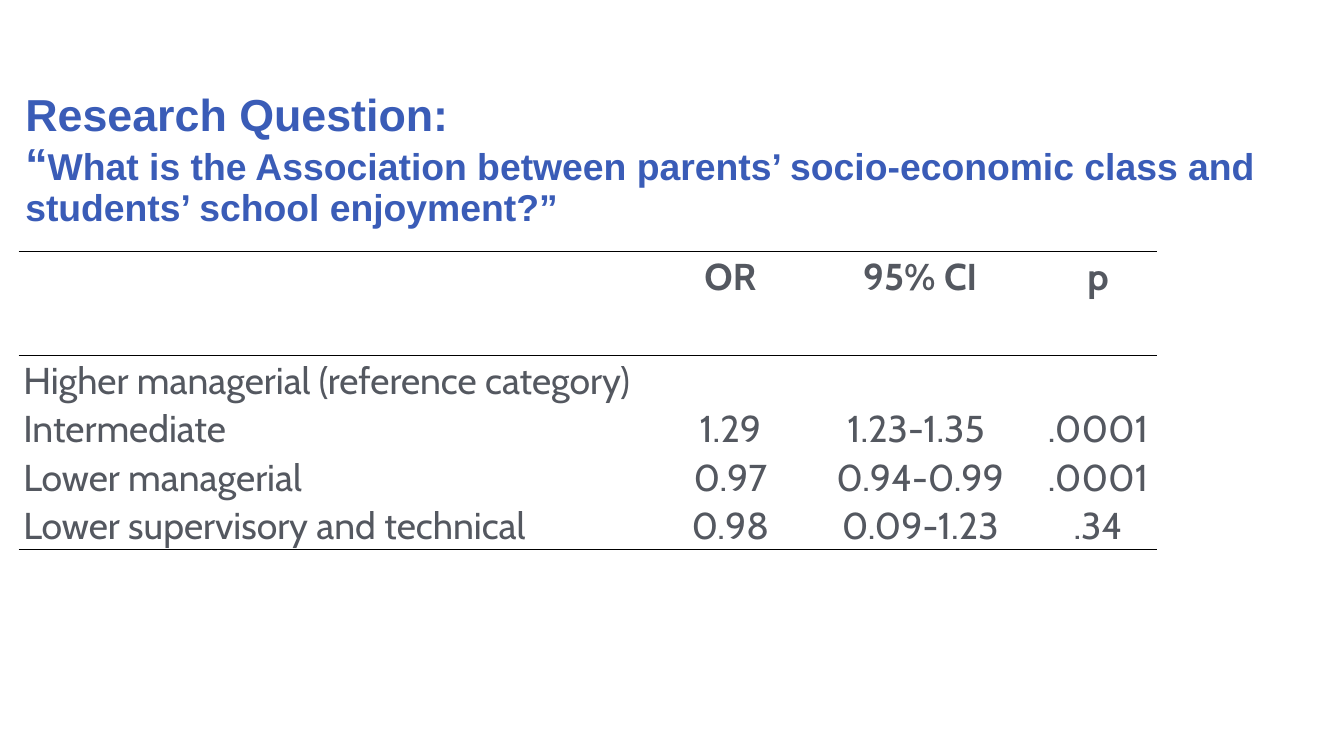
from typing import NamedTuple

from lxml import etree
from pptx import Presentation
from pptx.dml.color import RGBColor
from pptx.enum.text import MSO_ANCHOR, PP_ALIGN
from pptx.oxml.ns import qn
from pptx.util import Pt

LEFT, CENTER = PP_ALIGN.LEFT, PP_ALIGN.CENTER
TOP, MIDDLE = MSO_ANCHOR.TOP, MSO_ANCHOR.MIDDLE

BLUE = RGBColor(0x3A, 0x5C, 0xB7)
GREY = RGBColor(0x54, 0x58, 0x60)
BLACK = RGBColor(0x00, 0x00, 0x00)

COLUMN_WIDTHS = (686, 153, 254, 127)
HEADER_HEIGHT = 111.5
ROW_HEIGHT = 52
EDGES = ("lnL", "lnR", "lnT", "lnB")


class Result(NamedTuple):
    category: str
    odds_ratio: str = ""
    interval: str = ""
    p_value: str = ""


RESULTS = (
    Result("", "OR", "95% CI", "p"),
    Result("Higher managerial (reference category)"),
    Result("Intermediate", "1.29", "1.23-1.35 ", ".0001"),
    Result("Lower managerial", "0.97", "0.94-0.99", ".0001"),
    Result("Lower supervisory and technical", "0.98", "0.09-1.23", ".34"),
)


def add_question(slide) -> None:
    question = slide.shapes.add_textbox(Pt(20), Pt(60), Pt(1354), Pt(226))
    frame = question.text_frame
    frame.word_wrap = True
    frame.vertical_anchor = MIDDLE
    paragraph = frame.paragraphs[0]
    paragraph.line_spacing = 0.9
    paragraph.font.name = "Arial"
    paragraph.font.bold = True
    paragraph.font.color.rgb = BLUE
    heading = paragraph.add_run()
    heading.text = "Research Question:"
    heading.font.size = Pt(48)
    paragraph.add_line_break()
    opening_quote = paragraph.add_run()
    opening_quote.text = "“"
    opening_quote.font.size = Pt(48)
    wording = paragraph.add_run()
    wording.text = (
        "What is the Association between parents’ socio-economic class "
        "and students’ school enjoyment?”"
    )
    wording.font.size = Pt(40)


def set_borders(cell, ruled: set[str]) -> None:
    properties = cell._tc.get_or_add_tcPr()
    for position, edge in enumerate(EDGES):
        line = etree.Element(qn(f"a:{edge}"), w=str(Pt(1)))
        if edge in ruled:
            fill = etree.SubElement(line, qn("a:solidFill"))
            etree.SubElement(fill, qn("a:srgbClr"), val=str(BLACK))
        else:
            etree.SubElement(line, qn("a:noFill"))
        properties.insert(position, line)


def fill_cell(cell, text: str, is_header: bool, is_category: bool) -> None:
    cell.fill.background()
    cell.margin_left = cell.margin_right = Pt(5)
    cell.margin_top = cell.margin_bottom = Pt(0)
    cell.vertical_anchor = TOP if is_header or is_category else MIDDLE
    if not text:
        return
    paragraph = cell.text_frame.paragraphs[0]
    paragraph.text = text
    paragraph.alignment = LEFT if is_category else CENTER
    paragraph.line_spacing = 1.07
    paragraph.space_after = Pt(8)
    paragraph.font.name = "Cabin"
    paragraph.font.size = Pt(40)
    paragraph.font.bold = is_header
    paragraph.font.color.rgb = GREY


def add_results(slide, results: tuple[Result, ...]) -> None:
    last = len(results) - 1
    height = HEADER_HEIGHT + last * ROW_HEIGHT
    table = slide.shapes.add_table(
        len(results), len(COLUMN_WIDTHS),
        Pt(20), Pt(269), Pt(sum(COLUMN_WIDTHS)), Pt(height),
    ).table
    table.first_row = table.horz_banding = False
    for column, width in zip(table.columns, COLUMN_WIDTHS):
        column.width = Pt(width)
    ruled_edges = {0: {"lnT", "lnB"}, 1: {"lnT"}, last: {"lnB"}}
    for row, result in enumerate(results):
        table.rows[row].height = Pt(ROW_HEIGHT if row else HEADER_HEIGHT)
        for column, text in enumerate(result):
            cell = table.cell(row, column)
            fill_cell(cell, text, row == 0, column == 0)
            set_borders(cell, ruled_edges.get(row, set()))


def main() -> None:
    presentation = Presentation()
    presentation.slide_width = Pt(1440)
    presentation.slide_height = Pt(810)
    slide = presentation.slides.add_slide(presentation.slide_layouts[6])
    add_question(slide)
    add_results(slide, RESULTS)
    presentation.save("out.pptx")


if __name__ == "__main__":
    main()
